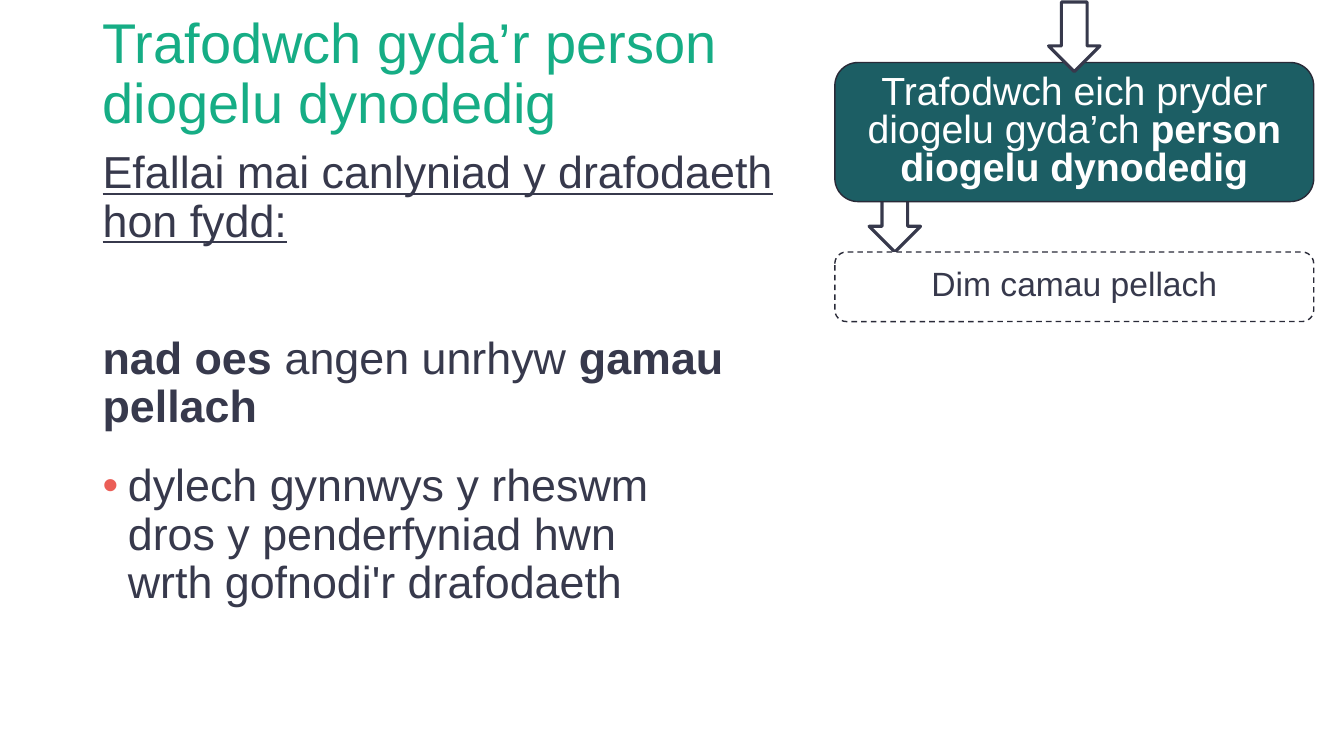
from lxml.etree import SubElement
from pptx import Presentation
from pptx.dml.color import RGBColor
from pptx.enum.dml import MSO_LINE_DASH_STYLE as Dash
from pptx.enum.shapes import MSO_SHAPE as Shape
from pptx.enum.text import MSO_ANCHOR as Anchor, PP_ALIGN as Align
from pptx.oxml.ns import qn
from pptx.util import Inches, Pt

COLORS = {
    "title": "16AD85",
    "ink": "37394C",
    "bullet": "EB5E57",
    "teal": "1C5E64",
    "border": "292A38",
    "white": "FFFFFF",
}
TEXT_LEFT, TEXT_WIDTH = 0.92, 6.86
CARD_LEFT, CARD_WIDTH = 8.28, 4.75


def color(name):
    return RGBColor.from_string(COLORS[name])


def add_bullet(para):
    props = para._p.get_or_add_pPr()
    props.set("marL", str(Inches(0.25)))
    props.set("indent", str(-Inches(0.25)))
    tint = SubElement(props, qn("a:buClr"))
    SubElement(tint, qn("a:srgbClr"), val=COLORS["bullet"])
    SubElement(props, qn("a:buFont"), typeface="Arial")
    SubElement(props, qn("a:buChar"), char="•")


def write(para, *spans, size=32, ink="ink", underline=False, align=Align.LEFT,
          spacing=0.9, before=0, after=0, bullet=False):
    para.alignment = align
    para.line_spacing = spacing
    para.space_before, para.space_after = Pt(before), Pt(after)
    if bullet:
        add_bullet(para)
    for text, bold in spans:
        for index, line in enumerate(text.split("\n")):
            if index:
                para.add_line_break()
            span = para.add_run()
            span.text = line
            font = span.font
            font.name, font.size, font.bold = "Arial", Pt(size), bold
            font.underline = underline
            font.color.rgb = color(ink)


def add_text_box(page, top, height, anchor=Anchor.TOP):
    box = page.shapes.add_textbox(Inches(TEXT_LEFT), Inches(top),
                                  Inches(TEXT_WIDTH), Inches(height))
    frame = box.text_frame
    frame.word_wrap = True
    frame.vertical_anchor = anchor
    return frame


def add_block(page, kind, left, top, width, height, fill, line, weight):
    block = page.shapes.add_shape(kind, Inches(left), Inches(top),
                                  Inches(width), Inches(height))
    block.shadow.inherit = False
    block.fill.solid()
    block.fill.fore_color.rgb = color(fill)
    block.line.color.rgb = color(line)
    block.line.width = Pt(weight)
    return block


def add_arrow(page, left, top):
    add_block(page, Shape.DOWN_ARROW, left, top, 0.51, 0.69, "white", "ink", 2.25)


def add_card(page, top, height, fill, *spans, size, ink):
    card = add_block(page, Shape.ROUNDED_RECTANGLE, CARD_LEFT, top,
                     CARD_WIDTH, height, fill, "border", 1)
    frame = card.text_frame
    frame.word_wrap = True
    frame.vertical_anchor = Anchor.MIDDLE
    write(frame.paragraphs[0], *spans, size=size, ink=ink,
          align=Align.CENTER, spacing=0.8)
    return card


def main():
    deck = Presentation()
    deck.slide_width, deck.slide_height = Inches(13.33), Inches(7.5)
    page = deck.slides.add_slide(deck.slide_layouts[6])

    title = add_text_box(page, 0.4, 0.69, Anchor.MIDDLE)
    write(title.paragraphs[0], ("Trafodwch gyda’r person diogelu dynodedig", False),
          size=40, ink="title")

    outcome = add_text_box(page, 3.28, 4.12)
    write(outcome.paragraphs[0], ("nad oes ", True), ("angen unrhyw", False),
          (" gamau pellach", True), after=12)
    write(outcome.add_paragraph(),
          ("dylech gynnwys y rheswm\ndros y penderfyniad hwn\n"
           "wrth gofnodi'r drafodaeth", False),
          before=10, after=12, bullet=True)

    intro = add_text_box(page, 1.44, 0.56)
    write(intro.paragraphs[0], ("Efallai mai canlyniad y drafodaeth hon fydd:", False),
          underline=True, after=12)

    add_arrow(page, 8.62, 1.81)
    add_card(page, 0.62, 1.38, "teal",
             ("Trafodwch eich pryder diogelu gyda’ch ", False),
             ("person diogelu dynodedig", True), size=28, ink="white")
    add_arrow(page, 10.4, 0.02)
    result = add_card(page, 2.5, 0.69, "white", ("Dim camau pellach", False),
                      size=24, ink="ink")
    result.line.dash_style = Dash.DASH

    deck.save("out.pptx")


if __name__ == "__main__":
    main()
